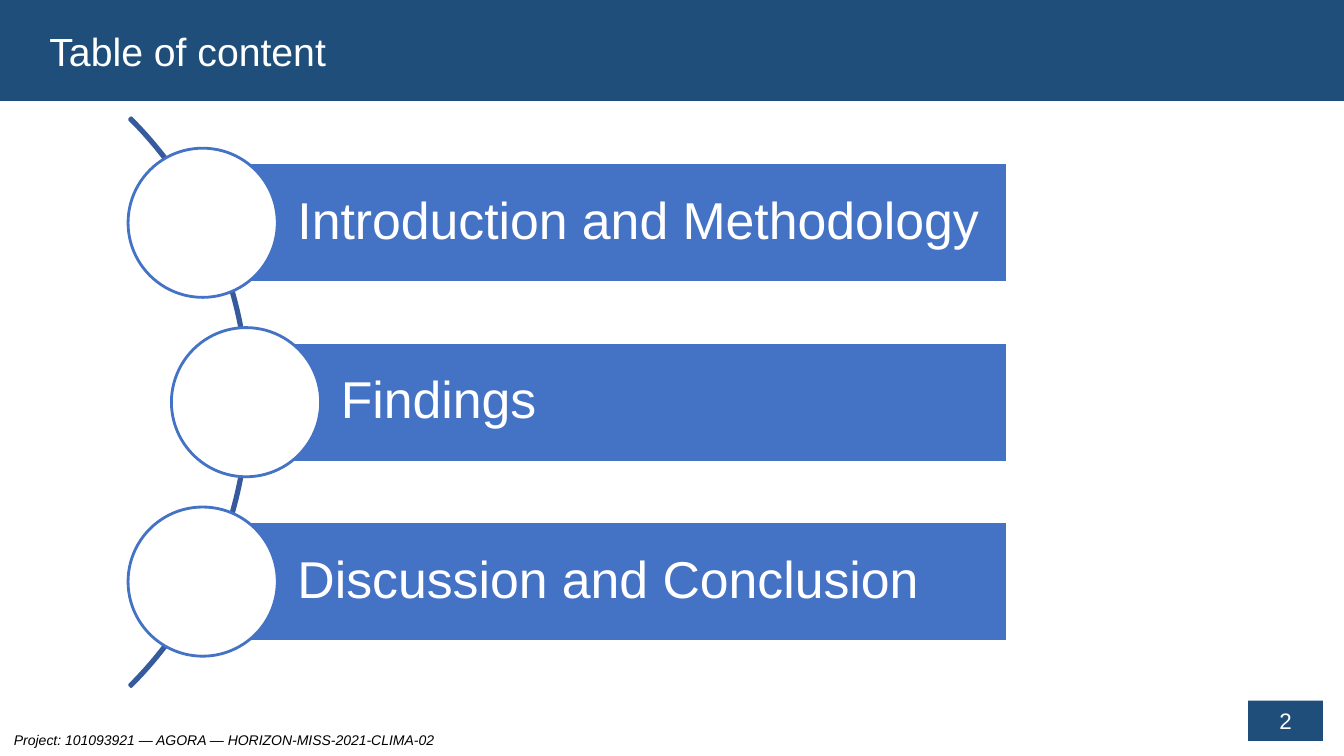
from pptx import Presentation
from pptx.dml.color import RGBColor
from pptx.enum.shapes import MSO_SHAPE
from pptx.enum.text import MSO_ANCHOR, MSO_AUTO_SIZE, PP_ALIGN
from pptx.util import Inches, Pt

RECTANGLE, OVAL, BLOCK_ARC = MSO_SHAPE.RECTANGLE, MSO_SHAPE.OVAL, MSO_SHAPE.BLOCK_ARC
TOP, MIDDLE = MSO_ANCHOR.TOP, MSO_ANCHOR.MIDDLE
LEFT, CENTER = PP_ALIGN.LEFT, PP_ALIGN.CENTER
NO_AUTOFIT = MSO_AUTO_SIZE.NONE
TITLE_ONLY_LAYOUT = 5

TITLE = "Table of content"
PAGE_NUMBER = "2"
FOOTER = "Project: 101093921 — AGORA — HORIZON-MISS-2021-CLIMA-02"
SECTIONS = [
    ("Introduction and Methodology", 2.01),
    ("Findings", 2.44),
    ("Discussion and Conclusion", 2.01),
]

THEME = {
    "font": "Arial",
    "navy": RGBColor(0x1E, 0x4E, 0x79),
    "blue": RGBColor(0x44, 0x72, 0xC4),
    "arc": RGBColor(0x36, 0x5B, 0x9D),
    "white": RGBColor(0xFF, 0xFF, 0xFF),
    "black": RGBColor(0, 0, 0),
    "title_size": 28,
    "section_size": 37,
    "number_size": 16,
    "footer_size": 10,
    "line_width": 2,
}

SLIDE_WIDTH, SLIDE_HEIGHT = 13.33, 7.5
BAR_RIGHT, BAR_HEIGHT = 9.99, 1.19
CIRCLE_SIZE = 1.48
ROW_PITCH = 1.78
ARC_LEFT, ARC_SIZE = -5.51, 7.98
ARC_ADJUSTMENTS = (189, 27, 0.003)
MIDDLE_Y = ARC_SIZE / 2


def paint(shape, fill=None, line=None):
    if fill is None:
        shape.fill.background()
    else:
        shape.fill.solid()
        shape.fill.fore_color.rgb = fill
    if line is None:
        shape.line.fill.background()
    else:
        shape.line.color.rgb = line
        shape.line.width = Pt(THEME["line_width"])


def add_shape(shapes, kind, box, fill=None, line=None):
    shape = shapes.add_shape(kind, *map(Inches, box))
    shape.shadow.inherit = False
    paint(shape, fill, line)
    return shape


def write(shape, text, size, color, anchor=MIDDLE, alignment=LEFT,
          insets=(0.1, 0.05, 0.1, 0.05), italic=False, line_spacing=1.0):
    frame = shape.text_frame
    left, top, right, bottom = map(Inches, insets)
    frame_format = {
        "word_wrap": True, "auto_size": NO_AUTOFIT, "vertical_anchor": anchor,
        "margin_left": left, "margin_top": top,
        "margin_right": right, "margin_bottom": bottom,
    }
    for name, value in frame_format.items():
        setattr(frame, name, value)
    paragraph = frame.paragraphs[0]
    paragraph.text = text
    paragraph.alignment = alignment
    paragraph.line_spacing = line_spacing
    font_format = {"name": THEME["font"], "size": Pt(size), "italic": italic}
    for name, value in font_format.items():
        setattr(paragraph.font, name, value)
    paragraph.font.color.rgb = color


def add_frame(slide):
    title = slide.shapes.title
    title_format = {"left": 0, "top": 0, "width": Inches(SLIDE_WIDTH), "height": Inches(1)}
    for name, value in title_format.items():
        setattr(title, name, value)
    paint(title, THEME["navy"])
    write(title, TITLE, THEME["title_size"], THEME["white"], insets=(0.49, 0.05, 0.1, 0.05))

    number = add_shape(slide.shapes, RECTANGLE, (12.38, 6.95, 0.74, 0.4), THEME["navy"])
    write(number, PAGE_NUMBER, THEME["number_size"], THEME["white"], alignment=CENTER)

    footer = slide.shapes.add_textbox(*map(Inches, (0.04, 7.21, 6.67, 0.27)))
    write(footer, FOOTER, THEME["footer_size"], THEME["black"], anchor=TOP, italic=True)


def add_sections(slide):
    shapes = slide.shapes.add_group_shape().shapes
    arc = add_shape(shapes, BLOCK_ARC, (ARC_LEFT, 0, ARC_SIZE, ARC_SIZE), line=THEME["arc"])
    for index, value in enumerate(ARC_ADJUSTMENTS):
        arc.adjustments[index] = value

    radius = CIRCLE_SIZE / 2
    for index, (text, left) in enumerate(SECTIONS):
        center_y = MIDDLE_Y + (index - 1) * ROW_PITCH
        bar_box = (left, center_y - BAR_HEIGHT / 2, BAR_RIGHT - left, BAR_HEIGHT)
        bar = add_shape(shapes, RECTANGLE, bar_box, THEME["blue"], THEME["white"])
        write(bar, text, THEME["section_size"], THEME["white"],
              insets=(0.94, 0.1, 0.1, 0.1), line_spacing=0.9)
        circle_box = (left - radius, center_y - radius, CIRCLE_SIZE, CIRCLE_SIZE)
        add_shape(shapes, OVAL, circle_box, THEME["white"], THEME["blue"])


def main():
    presentation = Presentation()
    presentation.slide_width = Inches(SLIDE_WIDTH)
    presentation.slide_height = Inches(SLIDE_HEIGHT)
    slide = presentation.slides.add_slide(presentation.slide_layouts[TITLE_ONLY_LAYOUT])
    add_frame(slide)
    add_sections(slide)
    presentation.save("out.pptx")


if __name__ == "__main__":
    main()
